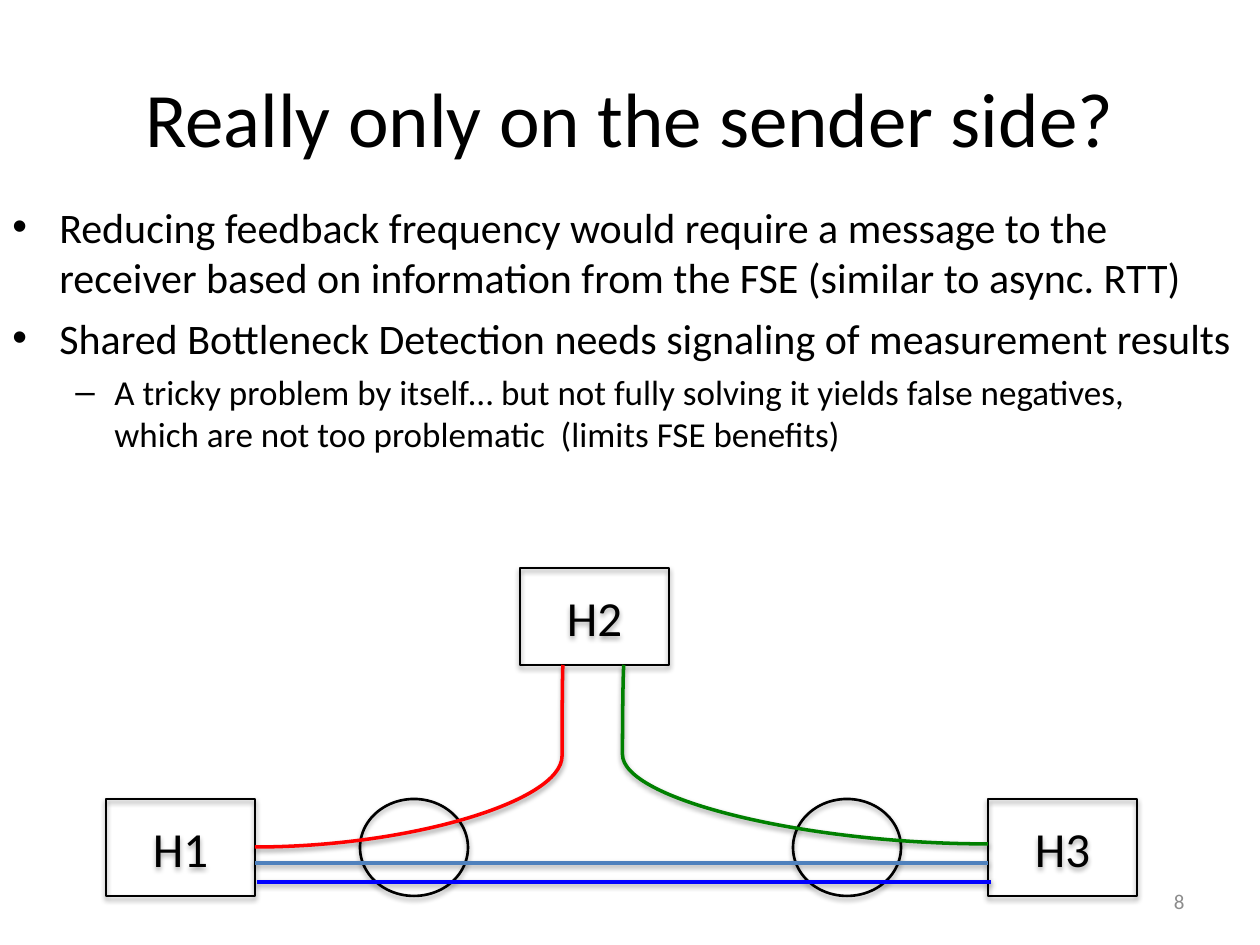
from pptx import Presentation
from pptx.dml.color import RGBColor
from pptx.enum.shapes import MSO_CONNECTOR, MSO_SHAPE
from pptx.enum.text import MSO_ANCHOR, PP_ALIGN
from pptx.oxml import parse_xml
from pptx.oxml.ns import nsdecls, qn
from pptx.util import Emu, Pt

# Content, lengths in px (126 to the inch)
TITLE = "Really only on the sender side?"
BULLETS = [  # level, text
    (0, "Reducing feedback frequency would require a message to the "
        "receiver based on information from the FSE (similar to async. RTT)"),
    (0, "Shared Bottleneck Detection needs signaling of measurement results"),
    (1, "A tricky problem by itself… but not fully solving it yields false "
        "negatives,\nwhich are not too problematic  (limits FSE benefits)"),
]
LEVELS = [  # size, space before, bullet, left margin, hanging indent
    (24, 5.8, "•", 47, 47),
    (20, 4.8, "–", 102, 39),
]
PAGE = "8"
HOSTS = [("H1", 106, 799), ("H3", 988, 799), ("H2", 520, 568)]
HOST_SIZE = (149, 97)
ROUTERS = [(360, 799), (793, 799)]
ROUTER_SIZE = (108, 97)
FLOWS = [  # from, to, colour, bend in 1/1000 % (None: straight)
    ((255, 863), (988, 863), "4F81BD", None),
    ((255, 847), (563, 665), "FF0000", 99700),
    ((988, 844), (624, 665), "008000", 100400),
    ((257, 882), (991, 882), "0000FF", None),
]


def px(n):
    return Emu(round(n * 914400 / 126))


def rgb(color):
    return RGBColor.from_string(color)


def style_runs(p, size, color="000000"):
    for r in p.runs:
        r.font.name = "Calibri"
        r.font.size = Pt(size)
        r.font.color.rgb = rgb(color)


def add_text(x, y, w, h, text, size, align, color="000000"):
    tf = s.shapes.add_textbox(px(x), px(y), px(w), px(h)).text_frame
    tf.word_wrap = True
    tf.vertical_anchor = MSO_ANCHOR.MIDDLE
    tf.text = text
    p = tf.paragraphs[0]
    p.alignment = align
    style_runs(p, size, color)


def outline(sp, color, width, alpha, dist):
    """Set the line, then the soft shadow below it."""
    sp.line.color.rgb = rgb(color)
    sp.line.width = Pt(width)
    sp._element.spPr.append(parse_xml(
        f'<a:effectLst {nsdecls("a")}><a:outerShdw blurRad="{Pt(3.1)}" '
        f'dist="{Pt(dist)}" dir="5400000" rotWithShape="0">'
        f'<a:srgbClr val="000000"><a:alpha val="{alpha * 1000}"/></a:srgbClr>'
        '</a:outerShdw></a:effectLst>'))


def add_node(kind, x, y, size, text=""):
    sp = s.shapes.add_shape(kind, px(x), px(y), *map(px, size))
    sp.fill.background()
    outline(sp, "000000", 1.5, 35, 1.8)
    if text:
        tf = sp.text_frame
        tf.text = text
        tf.vertical_anchor = MSO_ANCHOR.MIDDLE
        tf.paragraphs[0].alignment = PP_ALIGN.CENTER
        style_runs(tf.paragraphs[0], 28)


prs = Presentation()
prs.slide_width, prs.slide_height = px(1260), px(945)
s = prs.slides.add_slide(prs.slide_layouts[6])

# Title
add_text(63, 38, 1134, 157, TITLE, 44, PP_ALIGN.CENTER)

# Bullets
tf = s.shapes.add_textbox(px(0), px(195), px(1260), px(624)).text_frame
tf.word_wrap = True
for i, (level, text) in enumerate(BULLETS):
    size, before, char, margin, hang = LEVELS[level]
    p = tf.paragraphs[0] if i == 0 else tf.add_paragraph()
    p.text = text
    p.level = level
    pPr = p._p.get_or_add_pPr()
    pPr.set("marL", str(px(margin)))
    pPr.set("indent", str(-px(hang)))
    pPr.append(parse_xml(f'<a:buFont {nsdecls("a")} typeface="Arial"/>'))
    pPr.append(parse_xml(f'<a:buChar {nsdecls("a")} char="{char}"/>'))
    if i:
        p.space_before = Pt(before)
    style_runs(p, size)

# Page number
add_text(903, 876, 294, 50, PAGE, 12, PP_ALIGN.RIGHT, "8C8C8C")

# Hosts and routers
for name, x, y in HOSTS:
    add_node(MSO_SHAPE.RECTANGLE, x, y, HOST_SIZE, name)
for x, y in ROUTERS:
    add_node(MSO_SHAPE.OVAL, x, y, ROUTER_SIZE)

# Flows between the hosts
for start, end, color, bend in FLOWS:
    kind = MSO_CONNECTOR.CURVE if bend else MSO_CONNECTOR.STRAIGHT
    line = s.shapes.add_connector(kind, *map(px, start + end))
    outline(line, color, 2, 38, 1.6)
    if bend:
        geom = line._element.spPr.find(qn("a:prstGeom"))
        geom.get_or_add_avLst().append(parse_xml(
            f'<a:gd {nsdecls("a")} name="adj1" fmla="val {bend}"/>'))

prs.save("out.pptx")
